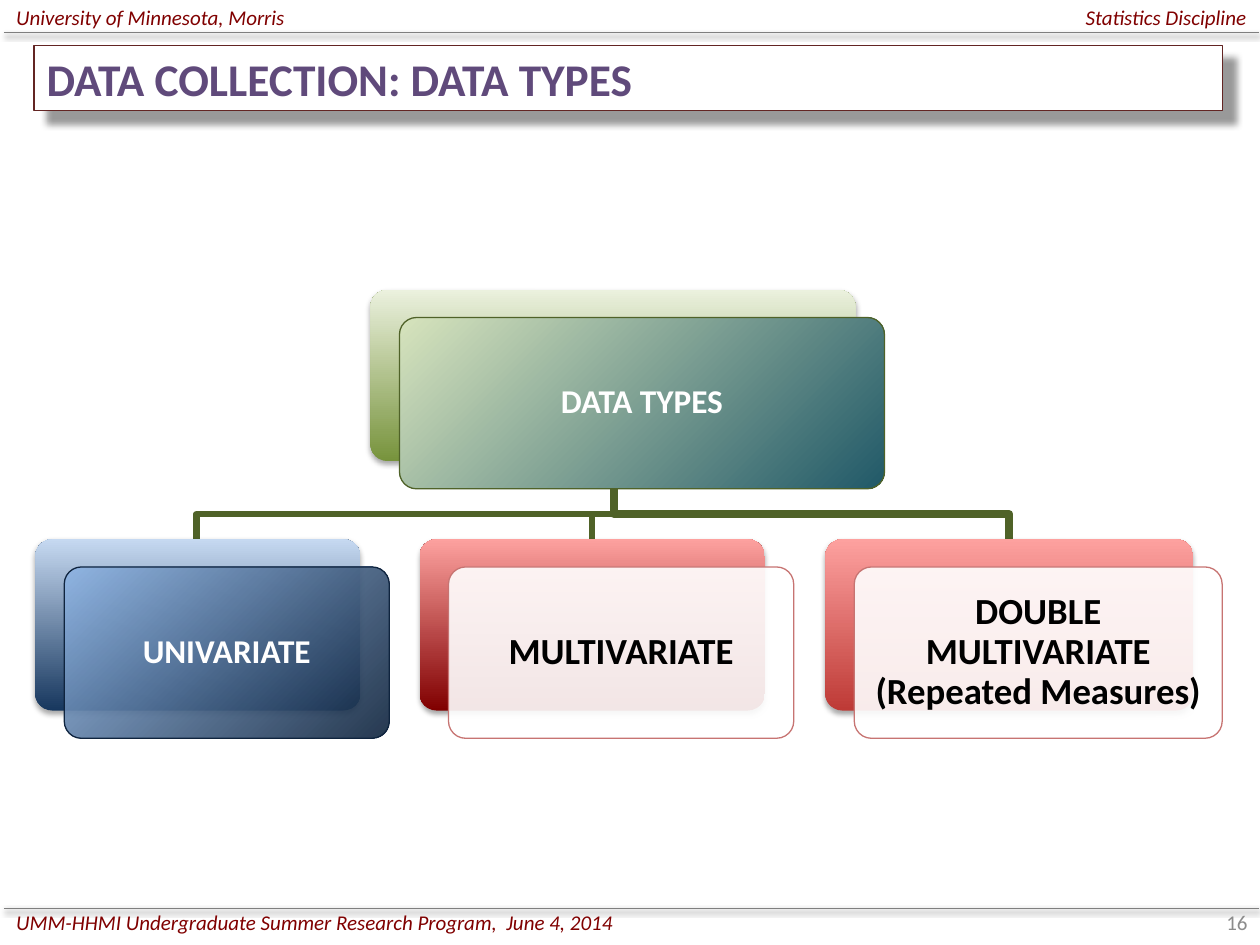
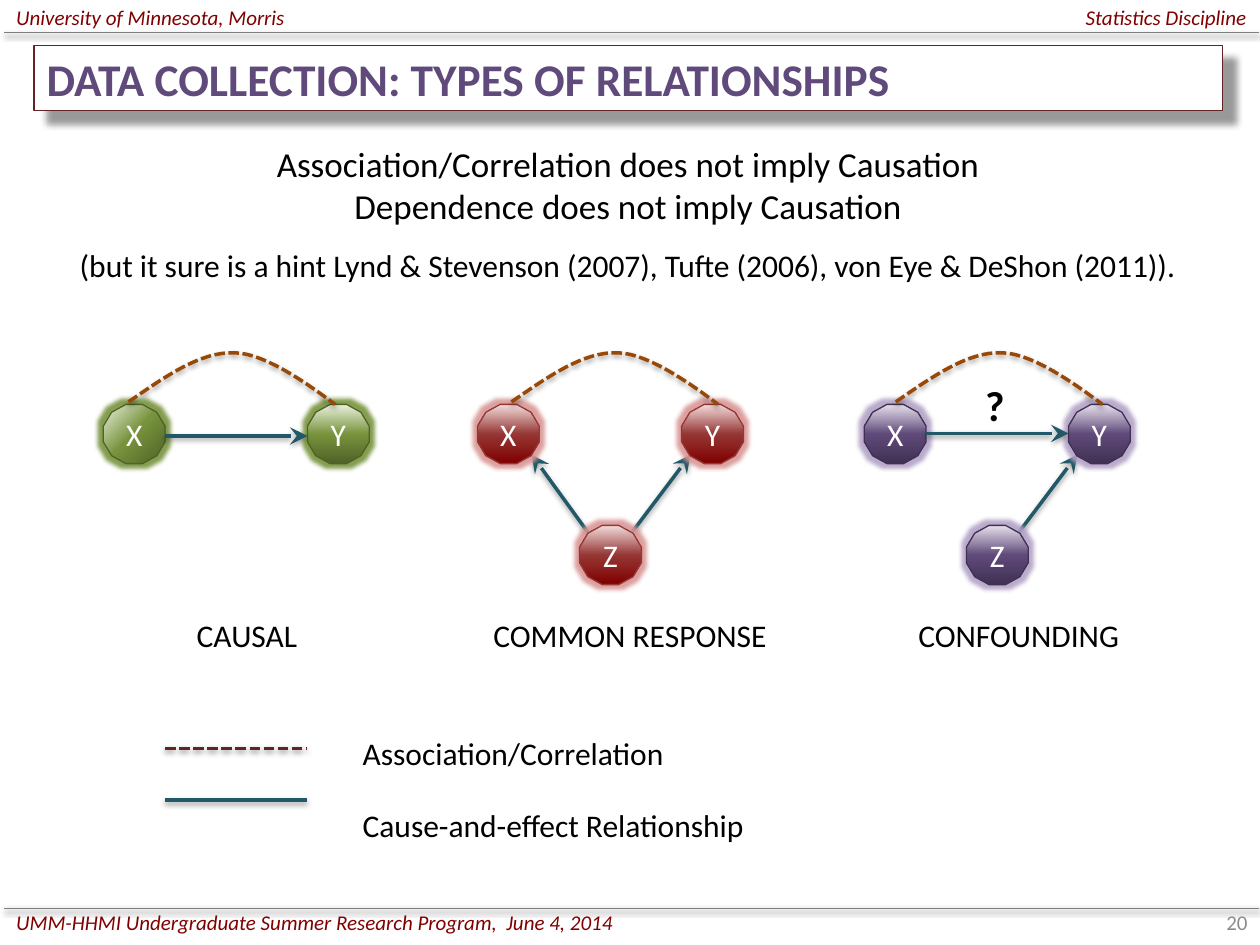
from pptx import Presentation
from pptx.dml.color import RGBColor
from pptx.enum.dml import MSO_LINE as Dash
from pptx.enum.shapes import MSO_CONNECTOR as Link, MSO_SHAPE as Form
from pptx.enum.text import MSO_ANCHOR as Anchor, PP_ALIGN as Align
from pptx.oxml import parse_xml
from pptx.oxml.ns import nsdecls, qn
from pptx.util import Inches, Pt

HUES = {
    "white": "FFFFFF", "black": "000000", "gray": "8C8C8C", "rule": "7F7F7F",
    "maroon": "800000", "wine": "632523", "brick": "953735", "blush": "F2DCDB",
    "rose": "D99694", "coral": "FDA19F", "red": "BE3A36", "edge": "C77472",
    "forest": "4F6228", "olive": "77933C", "mint": "EBF1DE", "lime": "D7E4BD",
    "teal": "215968", "navy": "17375E", "night": "0F243E", "sky": "C6D9F1",
    "azure": "8EB4E3", "plum": "403152", "violet": "604A7B", "lilac": "E6E0EC",
    "mauve": "B3A2C7", "rust": "984807",
}
SOFT = (38, 3.15, 1.57, 90)
CARD = (35, 3.15, 1.8, 90)
DEEP = (40, 4, 10, 45)
FOCAL = '<a:path path="circle"><a:fillToRect l="100000" t="100000"/></a:path>'
RISE = '<a:lin ang="16200000" scaled="0"/>'


class Deck:
    """Holds the style and the current slide, and draws each kind of element."""

    def __init__(self):
        self.show = Presentation()
        self.show.slide_width, self.show.slide_height = Inches(10), Inches(7.5)
        self.page = None

    def hue(self, name):
        return RGBColor.from_string(HUES[name])

    def tint(self, name, alpha=100):
        return (f'<a:srgbClr val="{HUES[name]}">'
                f'<a:alpha val="{alpha * 1000}"/></a:srgbClr>')

    def effect(self, shape, shade=None, glow=None):
        body = ""
        if glow:
            body += f'<a:glow rad="63500">{self.tint(glow, 90)}</a:glow>'
        if shade:
            alpha, blur, gap, turn = shade
            body += (f'<a:outerShdw blurRad="{Pt(blur)}" dist="{Pt(gap)}" '
                     f'dir="{turn * 60000}" algn="t" rotWithShape="0">'
                     f'{self.tint("black", alpha)}</a:outerShdw>')
        props = shape._element.spPr
        for old in props.findall(qn("a:effectLst")):
            props.remove(old)
        props.append(parse_xml(
            f'<a:effectLst {nsdecls("a")}>{body}</a:effectLst>'))

    def paint(self, shape, hues, alpha=100, way=RISE):
        shape.fill.background()
        if len(hues) == 1:
            xml = f'<a:solidFill {nsdecls("a")}>{self.tint(hues[0], alpha)}</a:solidFill>'
        else:
            step = 100000 // (len(hues) - 1)
            stops = "".join(f'<a:gs pos="{i * step}">{self.tint(hue, alpha)}</a:gs>'
                            for i, hue in enumerate(hues))
            xml = (f'<a:gradFill {nsdecls("a")} rotWithShape="1">'
                   f'<a:gsLst>{stops}</a:gsLst>{way}</a:gradFill>')
        props = shape._element.spPr
        props.replace(props.find(qn("a:noFill")), parse_xml(xml))

    def stroke(self, shape, hue, width=0.75, dash=False, head=False):
        shape.line.color.rgb = self.hue(hue)
        shape.line.width = Pt(width)
        if dash:
            shape.line.dash_style = Dash.SQUARE_DOT
        if head:
            shape._element.spPr.find(qn("a:ln")).append(parse_xml(
                f'<a:tailEnd {nsdecls("a")} type="stealth" w="lg" len="lg"/>'))

    def label(self, shape, words, size, hue="black", align=Align.LEFT,
              bold=False, slant=False, anchor=Anchor.MIDDLE, inset=None, lead=None):
        frame = shape.text_frame
        frame.word_wrap = True
        frame.vertical_anchor = anchor
        if inset is not None:
            frame.margin_left = frame.margin_right = Inches(inset)
            frame.margin_top = frame.margin_bottom = Inches(inset)
        frame.text = words
        for para in frame.paragraphs:
            para.alignment = align
            para.line_spacing = lead
            for run in para.runs:
                font = run.font
                font.name, font.size = "Calibri", Pt(size)
                font.bold, font.italic = bold, slant
                font.color.rgb = self.hue(hue)

    def text(self, box, words, size, **style):
        shape = self.page.shapes.add_textbox(*map(Inches, box))
        self.label(shape, words, size, **style)
        return shape

    def line(self, start, end, hue, width=2, dash=False, head=False):
        ends = map(Inches, (*start, *end))
        link = self.page.shapes.add_connector(Link.STRAIGHT, *ends)
        self.stroke(link, hue, width, dash, head)
        self.effect(link, SOFT)

    def trail(self, spots, hue, width, dash=False, shade=None):
        spots = [(Inches(x), Inches(y)) for x, y in spots]
        pen = self.page.shapes.build_freeform(*spots[0], scale=1.0)
        pen.add_line_segments(spots[1:], close=False)
        shape = pen.convert_to_shape()
        shape.fill.background()
        self.stroke(shape, hue, width, dash)
        self.effect(shape, shade)

    def shape(self, form, box, hues, edge=None, alpha=100, way=RISE,
              shade=None, glow=None):
        shape = self.page.shapes.add_shape(form, *map(Inches, box))
        if form == Form.ROUNDED_RECTANGLE:
            shape.adjustments[0] = 0.1
        self.paint(shape, hues, alpha, way)
        if edge:
            self.stroke(shape, edge)
        else:
            shape.line.fill.background()
        self.effect(shape, shade, glow)
        return shape

    def card(self, left, top, width, words, back, front, edge, size, hue, alpha):
        high, form = 1.36, Form.ROUNDED_RECTANGLE
        self.shape(form, (left, top, width, high), back, shade=CARD)
        face = self.shape(form, (left + 0.23, top + 0.22, width, high),
                          front, edge, alpha, FOCAL)
        self.label(face, words, size, hue, Align.CENTER, bold=True,
                   inset=0.09, lead=0.9)

    def node(self, left, top, words, hues, edge, glow, way=RISE):
        ball = self.shape(Form.DODECAGON, (left, top, 0.49, 0.47),
                          hues, edge, way=way, glow=glow)
        self.label(ball, words, 18, "white", Align.CENTER, inset=0)

    def arc(self, left):
        curves = [((0, 3.19), (0.29, 2.99), (0.57, 2.79), (0.84, 2.8)),
                  ((0.84, 2.8), (1.11, 2.8), (1.53, 3.13), (1.64, 3.21))]
        spots = []
        for a, b, c, d in curves:
            for t in (i / 16 for i in range(17)):
                u = 1 - t
                x, y = (u**3 * p + 3 * u * u * t * q + 3 * u * t * t * r + t**3 * s
                        for p, q, r, s in zip(a, b, c, d))
                spots.append((left + x, y))
        self.trail(spots, "rust", 2, True, SOFT)

    def start(self, title, number):
        self.page = self.show.slides.add_slide(self.show.slide_layouts[5])
        head = self.page.shapes.title
        head.left, head.top = Inches(0.27), Inches(0.36)
        head.width, head.height = Inches(9.43), Inches(0.52)
        self.paint(head, ["white"])
        self.stroke(head, "wine")
        self.effect(head, DEEP)
        self.label(head, title, 25.9, "violet", bold=True)
        for y in (0.26, 7.21):
            self.line((0.03, y), (9.99, y), "rule", 0.75)
        note = {"hue": "maroon", "slant": True}
        self.text((0.03, -0.06, 4.58, 0.4), "University of Minnesota, Morris", 12, **note)
        self.text((5.41, -0.06, 4.58, 0.4), "Statistics Discipline", 12,
                  align=Align.RIGHT, **note)
        self.text((0.03, 7.12, 5.38, 0.4),
                  "UMM-HHMI Undergraduate Summer Research Program,  June 4, 2014",
                  12, **note)
        self.text((7.67, 7.12, 2.33, 0.4), str(number), 12, hue="gray",
                  align=Align.RIGHT)


def types(deck):
    """Draws the tree of data types."""
    deck.start("DATA COLLECTION: DATA TYPES", 16)
    root = 4.87
    for x, width in ((8.01, 4.5), (4.7, 3.75), (1.56, 3.75)):
        deck.trail([(root, 3.66), (root, 4.08), (x, 4.08), (x, 4.28)], "forest", width)
    deck.card(2.94, 2.3, 3.85, "DATA TYPES", ["olive", "mint"], ["teal", "lime"],
              "forest", 19, "white", 100)
    row = 4.28
    deck.card(0.28, row, 2.58, "UNIVARIATE", ["navy", "sky"], ["night", "azure"],
              "night", 19, "white", 90)
    deck.card(3.33, row, 2.74, "MULTIVARIATE", ["maroon", "coral"], ["white"],
              "edge", 21, "black", 90)
    deck.card(6.55, row, 2.92, "DOUBLE MULTIVARIATE (Repeated Measures)",
              ["red", "coral"], ["white"], "edge", 21, "black", 90)


def links(deck):
    """Draws the three kinds of relationship and their key."""
    deck.start("DATA COLLECTION: TYPES OF RELATIONSHIPS", 20)
    mid = {"align": Align.CENTER, "anchor": Anchor.TOP}
    deck.text((0.27, 1.08, 9.43, 0.77),
              "Association/Correlation does not imply Causation\n"
              "Dependence does not imply Causation", 20, **mid)
    deck.text((0.27, 1.9, 9.43, 0.4),
              "(but it sure is a hint Lynd & Stevenson (2007), Tufte (2006), "
              "von Eye & DeShon (2011)).", 18, **mid)
    green = (["forest", "olive", "mint"], "forest", "olive")
    red = (["maroon", "brick", "blush"], "brick", "rose")
    purple = (["plum", "violet", "lilac"], "plum", "mauve")
    plots = [("CAUSAL", 0.82, 2.28, 1.02, green, 3.46, ""),
             ("COMMON RESPONSE", 3.79, 2.42, 4.06, red, None, "XY"),
             ("CONFOUNDING", 6.86, 2.45, 7.11, purple, 3.44, "Y")]
    for name, left, width, bow, look, level, goals in plots:
        if "X" in goals:
            deck.line((left + 0.88, 4.23), (left + 0.43, 3.61), "teal", head=True)
        if "Y" in goals:
            deck.line((left + 1.23, 4.22), (left + 1.69, 3.61), "teal", head=True)
        deck.node(left, 3.21, "X", *look, way=FOCAL if look is green else RISE)
        deck.node(left + 1.62, 3.21, "Y", *look)
        if goals:
            deck.node(left + 0.81, 4.17, "Z", *look)
        deck.arc(bow)
        if level:
            deck.line((left + 0.49, level), (left + 1.62, level), "teal", head=True)
        deck.text((left, 4.84, width, 0.4), name, 18, **mid)
    mark = deck.text((7.72, 2.96, 0.36, 0.5), "?", 24, bold=True, anchor=Anchor.TOP)
    mark.text_frame.word_wrap = False
    deck.line((1.31, 5.94), (2.44, 5.94), "wine", dash=True)
    deck.line((1.31, 6.35), (2.44, 6.35), "teal")
    deck.text((2.78, 5.78, 2.63, 0.4), "Association/Correlation", 18, anchor=Anchor.TOP)
    deck.text((2.78, 6.35, 3.43, 0.4), "Cause-and-effect Relationship", 18,
              anchor=Anchor.TOP)


def main():
    """Builds both slides and saves them."""
    deck = Deck()
    types(deck)
    links(deck)
    deck.show.save("out.pptx")


if __name__ == "__main__":
    main()
